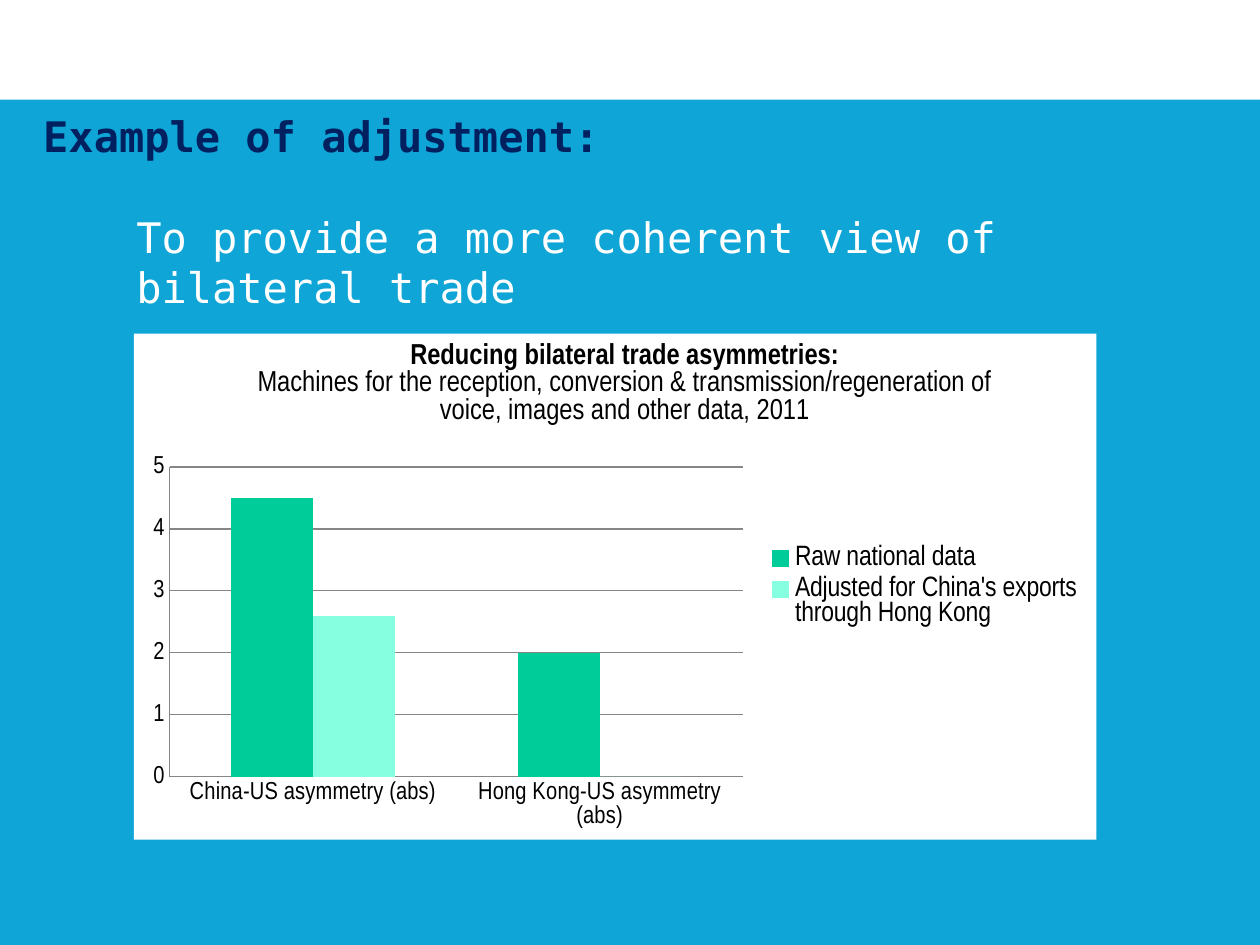
import pptx
import pptx.chart.data
import pptx.dml.color
import pptx.enum.chart
import pptx.enum.shapes
import pptx.enum.text
import pptx.oxml
import pptx.util
from pptx.util import Pt

# Content
TITLE = "Example of adjustment:"
BODY = "To provide a more coherent view of bilateral trade"
CHART_TITLE = [
    ("Reducing bilateral trade asymmetries:", True),
    ("Machines for the reception, conversion & transmission/regeneration of "
     "voice, images and other data, 2011", False),
]
CATEGORIES = ["China-US asymmetry (abs)", "Hong Kong-US asymmetry (abs)"]
SERIES = [
    ("Raw national data", (4.5, 2), "raw"),
    ("Adjusted for China's exports through Hong Kong", (2.6, 0), "adjusted"),
]

COLORS = {"background": "0FA6D7", "white": "FFFFFF", "black": "000000", "navy": "002060",
          "raw": "00CC99", "adjusted": "85FFE0", "grid": "868686"}
MONO, NARROW = "DejaVu Sans Mono", "Arial Narrow"

# Chart box, and its parts in points from the chart's corner
CHART = {"x": 76.5, "y": 190.6, "w": 550, "h": 289.2}
PLOT = {"x": 20.5, "y": 76.3, "w": 327.5, "h": 177}
LEGEND = {"x": 358.4, "y": 118, "w": 187, "h": 53}
HEADING = {"x": 68.5, "y": 2}


def rgb(name):
    return pptx.dml.color.RGBColor.from_string(COLORS[name])


def set_fill(fill, name):
    fill.solid()
    fill.fore_color.rgb = rgb(name)


def set_font(font, name, size, color, bold=False):
    font.name, font.size, font.bold = name, Pt(size), bold
    font.color.rgb = rgb(color)


def set_text(sp, box, text, color, bold):
    sp.left, sp.top, sp.width, sp.height = map(Pt, box)
    tf = sp.text_frame
    tf.text = text
    tf.word_wrap = True
    tf.auto_size = pptx.enum.text.MSO_AUTO_SIZE.NONE
    tf.vertical_anchor = pptx.enum.text.MSO_ANCHOR.TOP
    p = tf.paragraphs[0]
    p.alignment = pptx.enum.text.PP_ALIGN.LEFT
    p.space_before = Pt(0)
    p.line_spacing = 1.0
    set_font(p.font, MONO, 24, color, bold)
    return p


def make_layout(box, inner=False):
    target = '<c:layoutTarget val="inner"/>' if inner else ""
    modes = "".join(f'<c:{k}Mode val="edge"/>' for k in "xy")
    whole = {"x": CHART["w"], "y": CHART["h"], "w": CHART["w"], "h": CHART["h"]}
    values = "".join(f'<c:{k} val="{v / whole[k]:.4f}"/>' for k, v in box.items())
    return pptx.oxml.parse_xml(
        '<c:layout xmlns:c="http://schemas.openxmlformats.org/drawingml/2006/chart">'
        f"<c:manualLayout>{target}{modes}{values}</c:manualLayout></c:layout>")


def place(parent, after, layout):
    for old in parent.xpath("c:layout"):
        parent.remove(old)
    before = parent.xpath(after) if after else []
    parent.insert(parent.index(before[-1]) + 1 if before else 0, layout)


prs = pptx.Presentation()
prs.slide_width, prs.slide_height = Pt(720), Pt(540)
s = prs.slides.add_slide(prs.slide_layouts[1])
set_fill(s.background.fill, "background")

# White band across the top
band = s.shapes.add_shape(pptx.enum.shapes.MSO_SHAPE.RECTANGLE, 0, 0, prs.slide_width, Pt(57))
band.shadow.inherit = False
set_fill(band.fill, "white")
band.line.fill.background()

# Title and statement
set_text(s.shapes.title, (17.5, 59.5, 402.5, 36), TITLE, "navy", True)
p = set_text(s.placeholders[1], (70.7, 117.2, 561.5, 65), BODY, "white", False)
pPr = p._p.get_or_add_pPr()
pPr.set("marL", "0")
pPr.set("indent", "0")
pPr.insert_element_before(pptx.oxml.parse_xml(
    '<a:buNone xmlns:a="http://schemas.openxmlformats.org/drawingml/2006/main"/>'),
    "a:tabLst", "a:defRPr", "a:extLst")

# Column chart
data = pptx.chart.data.CategoryChartData()
data.categories = CATEGORIES
for name, values, _ in SERIES:
    data.add_series(name, values)
chart = s.shapes.add_chart(pptx.enum.chart.XL_CHART_TYPE.COLUMN_CLUSTERED,
                           *map(Pt, CHART.values()), data).chart
set_font(chart.font, NARROW, 14, "black")
space = chart._chartSpace
space.chart.addnext(pptx.oxml.parse_xml(
    '<c:spPr xmlns:c="http://schemas.openxmlformats.org/drawingml/2006/chart" '
    'xmlns:a="http://schemas.openxmlformats.org/drawingml/2006/main">'
    f'<a:solidFill><a:srgbClr val="{COLORS["white"]}"/></a:solidFill>'
    "<a:ln><a:noFill/></a:ln></c:spPr>"))

plot = chart.plots[0]
plot.gap_width, plot.overlap, plot.vary_by_categories = 150, 0, False
for series, (_, _, color) in zip(plot.series, SERIES):
    set_fill(series.format.fill, color)

# Axes
value_axis = chart.value_axis
value_axis.minimum_scale, value_axis.maximum_scale, value_axis.major_unit = 0, 5, 1
value_axis.has_major_gridlines = True
value_axis.tick_labels.number_format = "0"
value_axis.tick_labels.number_format_is_linked = False
for axis in (value_axis, chart.category_axis):
    axis.major_tick_mark = pptx.enum.chart.XL_TICK_MARK.NONE
    set_font(axis.tick_labels.font, NARROW, 14, "black")
for part in (value_axis, value_axis.major_gridlines, chart.category_axis):
    part.format.line.color.rgb = rgb("grid")
    part.format.line.width = Pt(0.75)

# Chart heading
chart.has_title = True
tf = chart.chart_title.text_frame
for i, (text, bold) in enumerate(CHART_TITLE):
    p = tf.add_paragraph() if i else tf.paragraphs[0]
    r = p.add_run()
    r.text = text
    set_font(r.font, NARROW, 16.5, "black", bold)
chart.chart_title.include_in_layout = False

# Legend
chart.has_legend = True
legend = chart.legend
legend.position = pptx.enum.chart.XL_LEGEND_POSITION.RIGHT
legend.include_in_layout = False
set_font(legend.font, NARROW, 16, "black")

place(space.chart.plotArea, None, make_layout(PLOT, inner=True))
place(legend._element, "c:legendPos", make_layout(LEGEND))
place(chart.chart_title._element, "c:tx", make_layout(HEADING))

prs.save("out.pptx")
